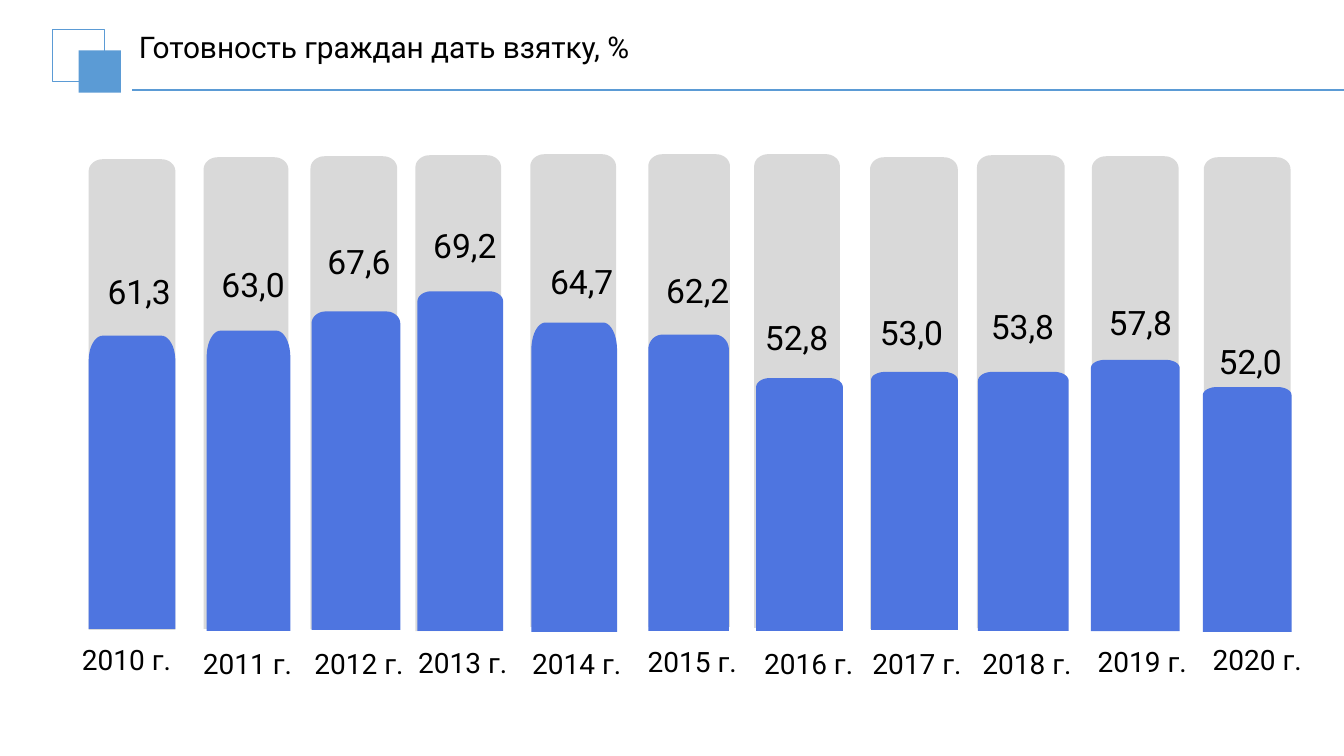
from dataclasses import dataclass
from math import cos, pi, sin

from lxml.etree import SubElement
from pptx import Presentation
from pptx.dml.color import RGBColor
from pptx.enum.shapes import MSO_CONNECTOR, MSO_SHAPE
from pptx.enum.text import MSO_ANCHOR, PP_ALIGN
from pptx.oxml.ns import qn
from pptx.util import Inches, Pt


@dataclass(frozen=True)
class Theme:
    font: str = "Roboto"
    text: str = "000000"
    accent: str = "5B9BD5"
    track: str = "D9D9D9"
    bar: str = "4E75E0"
    title_size: float = 21.3
    value_size: float = 24
    year_size: float = 20
    thin: float = 0.75
    rule: float = 1.25


class SlideBuilder:
    def __init__(self, s, theme):
        self.s = s
        self.theme = theme

    def text(self, text, x, y, w, h, size, **formats):
        tf = self.s.shapes.add_textbox(*map(Inches, (x, y, w, h))).text_frame
        tf.word_wrap = True
        tf.vertical_anchor = formats.pop("anchor", MSO_ANCHOR.TOP)
        p = tf.paragraphs[0]
        for name, value in {"alignment": PP_ALIGN.CENTER, **formats}.items():
            setattr(p, name, value)
        r = p.add_run()
        r.text = text
        for name, value in {"name": self.theme.font, "size": Pt(size)}.items():
            setattr(r.font, name, value)
        r.font.color.rgb = RGBColor.from_string(self.theme.text)

    def square(self, x, y, side, filled):
        sp = self.s.shapes.add_shape(MSO_SHAPE.RECTANGLE, *map(Inches, (x, y, side, side)))
        sp.shadow.inherit = False
        color = RGBColor.from_string(self.theme.accent)
        if filled:
            sp.fill.solid()
            sp.fill.fore_color.rgb = color
            sp.line.fill.background()
        else:
            sp.fill.background()
            sp.line.color.rgb = color
            sp.line.width = Pt(self.theme.thin)

    def rule(self, x1, x2, y):
        sp = self.s.shapes.add_connector(MSO_CONNECTOR.STRAIGHT, *map(Inches, (x1, y, x2, y)))
        sp.line.color.rgb = RGBColor.from_string(self.theme.accent)
        sp.line.width = Pt(self.theme.rule)
        SubElement(sp._element.spPr, qn("a:effectLst"))

    def column(self, x, y, w, bottom, ry, color, rx=0.14, steps=10):
        turns = [i * pi / 2 / steps for i in range(steps + 1)]
        left = [(x + rx - rx * cos(a), y + ry - ry * sin(a)) for a in turns]
        right = [(2 * x + w - px, py) for px, py in reversed(left)]
        points = [(Inches(px), Inches(py)) for px, py in left + right + [(x + w, bottom)]]
        outline = self.s.shapes.build_freeform(Inches(x), Inches(bottom))
        outline.add_line_segments(points, close=True)
        sp = outline.convert_to_shape()
        sp.shadow.inherit = False
        sp.fill.solid()
        sp.fill.fore_color.rgb = RGBColor.from_string(color)
        sp.line.fill.background()


# year, value, track (x, y, w, bottom), bar (x, y, w, bottom, corner), value (x, y), year (x, y, w)
COLUMNS = [
    ("2010", "61,3", (0.88, 1.58, 0.86, 6.25), (0.88, 3.33, 0.86, 6.24, 0.25), (0.82, 2.64), (0.65, 6.33, 1.21)),
    ("2011", "63,0", (2.02, 1.56, 0.84, 6.24), (2.05, 3.28, 0.83, 6.26, 0.26), (1.95, 2.57), (1.85, 6.36, 1.21)),
    ("2012", "67,6", (3.08, 1.55, 0.86, 6.24), (3.09, 3.09, 0.88, 6.25, 0.12), (3.0, 2.34), (2.95, 6.36, 1.22)),
    ("2013", "69,2", (4.12, 1.54, 0.85, 6.26), (4.14, 2.89, 0.85, 6.26, 0.1), (4.05, 2.18), (3.96, 6.35, 1.26)),
    ("2014", "64,7", (5.26, 1.53, 0.85, 6.22), (5.27, 3.2, 0.85, 6.27, 0.27), (5.21, 2.54), (5.11, 6.36, 1.22)),
    ("2015", "62,2", (6.43, 1.53, 0.81, 6.22), (6.43, 3.32, 0.8, 6.26, 0.15), (6.36, 2.63), (6.26, 6.34, 1.21)),
    ("2016", "52,8", (7.48, 1.53, 0.85, 6.23), (7.5, 3.75, 0.86, 6.26, 0.09), (7.34, 3.09), (7.41, 6.36, 1.22)),
    ("2017", "53,0", (8.63, 1.56, 0.87, 6.24), (8.64, 3.69, 0.86, 6.25, 0.08), (8.48, 3.05), (8.48, 6.36, 1.23)),
    ("2018", "53,8", (9.69, 1.54, 0.87, 6.23), (9.7, 3.69, 0.9, 6.26, 0.09), (9.58, 2.99), (9.56, 6.36, 1.25)),
    ("2019", "57,8", (10.83, 1.55, 0.86, 6.23), (10.82, 3.57, 0.88, 6.26, 0.08), (10.75, 2.95), (10.7, 6.34, 1.26)),
    ("2020", "52,0", (11.94, 1.56, 0.86, 6.24), (11.93, 3.84, 0.88, 6.27, 0.08), (11.84, 3.33), (11.84, 6.33, 1.26)),
]


def main():
    """Build the slide on readiness to give a bribe, by year."""
    prs = Presentation()
    prs.slide_width, prs.slide_height = Inches(13.33), Inches(7.5)
    theme = Theme()
    b = SlideBuilder(prs.slides.add_slide(prs.slide_layouts[6]), theme)

    b.square(0.52, 0.29, 0.52, filled=False)
    b.square(0.78, 0.5, 0.42, filled=True)
    b.rule(1.31, 13.33, 0.89)
    b.text("Готовность граждан дать взятку, %", 1.28, 0.19, 12, 0.58, theme.title_size,
           anchor=MSO_ANCHOR.MIDDLE, alignment=PP_ALIGN.LEFT, line_spacing=0.9)

    for year, value, track, bar, value_at, year_at in COLUMNS:
        b.column(*track, 0.12, theme.track)
        b.column(*bar, theme.bar)
        b.text(value, *value_at, 1.12, 0.5, theme.value_size)
        b.text(f"{year} г.", *year_at, 0.44, theme.year_size)

    prs.save("out.pptx")


if __name__ == "__main__":
    main()
